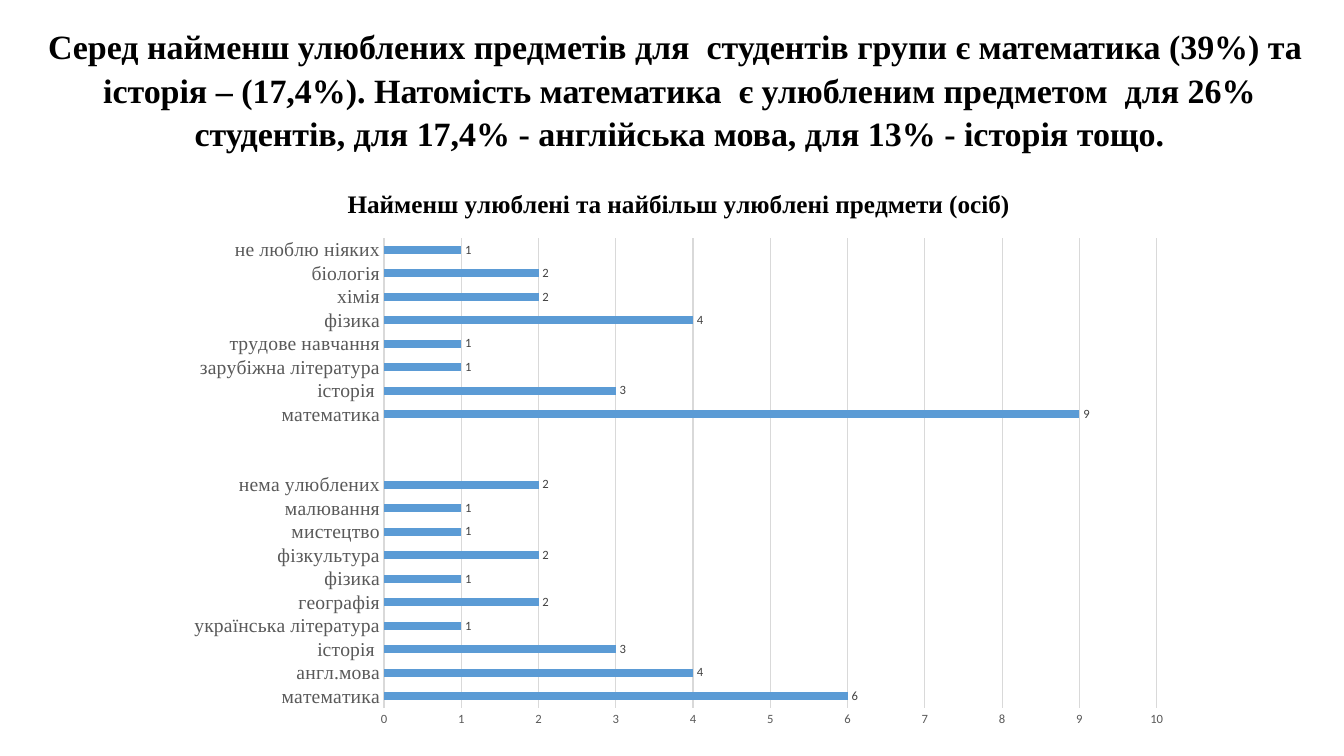
from pptx import Presentation
from pptx.chart.data import CategoryChartData as ChartData
from pptx.dml.color import RGBColor
from pptx.enum.chart import XL_CHART_TYPE as ChartType
from pptx.enum.chart import XL_LABEL_POSITION as LabelPosition
from pptx.enum.chart import XL_TICK_MARK as TickMark
from pptx.enum.text import MSO_ANCHOR as Anchor
from pptx.enum.text import MSO_AUTO_SIZE as AutoSize
from pptx.enum.text import PP_ALIGN as Align
from pptx.util import Cm, Pt

COLORS = {"black": "000000", "axis": "595959", "label": "404040",
          "grid": "D9D9D9", "bar": "5B9BD5"}
SERIF, SANS = "Times New Roman", "Calibri"

HEADLINE = ("Серед найменш улюблених предметів для  студентів групи є математика (39%) та  "
            "історія – (17,4%). Натомість математика  є улюбленим предметом  для 26% "
            "студентів, для 17,4% - англійська мова, для 13% - історія тощо.")
CHART_TITLE = "Найменш улюблені та найбільш улюблені предмети (осіб)"
FAVOURITE = [("математика", 6), ("англ.мова", 4), ("історія ", 3),
             ("українська література", 1), ("географія", 2), ("фізика", 1),
             ("фізкультура", 2), ("мистецтво", 1), ("малювання", 1),
             ("нема улюблених", 2)]
GAP = [("", None)] * 2
LEAST_FAVOURITE = [("математика", 9), ("історія ", 3), ("зарубіжна література", 1),
                   ("трудове навчання", 1), ("фізика", 4), ("хімія", 2),
                   ("біологія", 2), ("не люблю ніяких", 1)]


class SurveyPage:
    """Holds the slide and its text and line style."""

    def __init__(self, deck):
        """Add a page that has only a title placeholder."""
        self.page = deck.slides.add_slide(deck.slide_layouts[5])

    def color(self, name):
        """Return a named colour."""
        return RGBColor.from_string(COLORS[name])

    def style_font(self, font, face, size, color, bold=False):
        """Set face, size, colour and weight of a font."""
        font.name, font.size, font.bold = face, Pt(size), bold
        font.color.rgb = self.color(color)

    def style_line(self, line):
        """Draw a thin grey line."""
        line.color.rgb = self.color("grid")
        line.width = Pt(0.75)

    def headline(self, text, left, top, width, height):
        """Place and format the title placeholder."""
        box = self.page.shapes.title
        box.left, box.top, box.width, box.height = map(Cm, (left, top, width, height))
        frame = box.text_frame
        frame.word_wrap, frame.auto_size = True, AutoSize.NONE
        frame.vertical_anchor = Anchor.MIDDLE
        frame.margin_top, frame.margin_bottom = Cm(0), Cm(0.3)
        para = frame.paragraphs[0]
        para.text = text
        para.alignment, para.line_spacing = Align.CENTER, 1.07
        self.style_font(para.font, SERIF, 24.3, "black", True)

    def bar_chart(self, title, rows, left, top, width, height):
        """Add a horizontal bar chart with value labels."""
        data = ChartData()
        data.categories = [subject for subject, count in rows]
        data.add_series("Series 1", [count for subject, count in rows])
        chart = self.page.shapes.add_chart(
            ChartType.BAR_CLUSTERED, *map(Cm, (left, top, width, height)), data).chart
        self.style_font(chart.font, SANS, 10, "black")
        chart.has_legend = False
        chart.has_title = True
        para = chart.chart_title.text_frame.paragraphs[0]
        para.text = title
        self.style_font(para.font, SERIF, 18, "black", True)
        chart.chart_title.include_in_layout = False
        self.bars(chart.plots[0])
        self.axes(chart.category_axis, chart.value_axis)

    def bars(self, plot):
        """Format the bars and their labels."""
        plot.gap_width, plot.vary_by_categories = 182, False
        fill = plot.series[0].format.fill
        fill.solid()
        fill.fore_color.rgb = self.color("bar")
        plot.has_data_labels = True
        labels = plot.data_labels
        labels.show_value, labels.position = True, LabelPosition.OUTSIDE_END
        self.style_font(labels.font, SANS, 9, "label")

    def axes(self, subjects, counts):
        """Format the subject and count axes."""
        for axis, face, size in ((subjects, SERIF, 14), (counts, SANS, 9)):
            axis.major_tick_mark = axis.minor_tick_mark = TickMark.NONE
            self.style_font(axis.tick_labels.font, face, size, "axis")
        self.style_line(subjects.format.line)
        counts.minimum_scale, counts.maximum_scale, counts.major_unit = 0, 10, 1
        counts.format.line.fill.background()
        counts.has_major_gridlines = True
        self.style_line(counts.major_gridlines.format.line)


def main():
    """Build and save the deck."""
    deck = Presentation()
    deck.slide_width, deck.slide_height = Cm(33.87), Cm(19.05)
    survey = SurveyPage(deck)
    survey.headline(HEADLINE, 0.74, 0.53, 32.77, 3.68)
    survey.bar_chart(CHART_TITLE, FAVOURITE + GAP + LEAST_FAVOURITE,
                     4.39, 4.22, 25.43, 14.38)
    deck.save("out.pptx")


if __name__ == "__main__":
    main()
